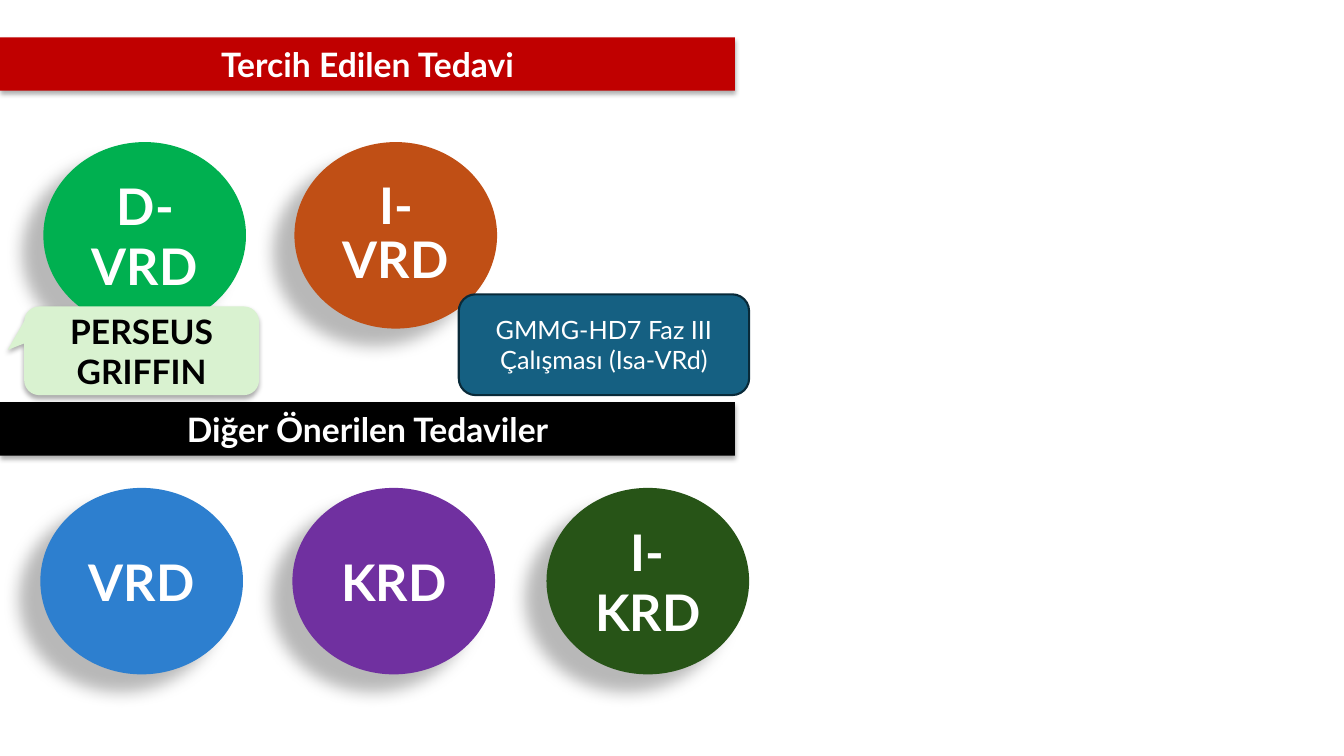
from dataclasses import dataclass

from lxml import etree
from pptx import Presentation
from pptx.dml.color import RGBColor
from pptx.enum.shapes import MSO_SHAPE
from pptx.enum.text import MSO_ANCHOR, PP_ALIGN
from pptx.oxml.ns import qn
from pptx.shapes.autoshape import Shape
from pptx.slide import Slide
from pptx.util import Inches, Pt

ELLIPSE = MSO_SHAPE.OVAL
RECTANGLE = MSO_SHAPE.RECTANGLE
ROUNDED = MSO_SHAPE.ROUNDED_RECTANGLE
CALLOUT = MSO_SHAPE.ROUNDED_RECTANGULAR_CALLOUT
MIDDLE = MSO_ANCHOR.MIDDLE
CENTER = PP_ALIGN.CENTER


@dataclass(frozen=True)
class Shadow:
    opacity: int
    blur: float
    distance: float
    angle: int


@dataclass(frozen=True)
class Theme:
    font: str = "Lato"
    white: str = "FFFFFF"
    black: str = "000000"
    red: str = "C00000"
    green: str = "00B050"
    orange: str = "C04F15"
    blue: str = "2D7FCF"
    purple: str = "7030A0"
    dark_green: str = "275417"
    pale_green: str = "D9F2D0"
    teal: str = "156082"
    dark_teal: str = "092A39"
    regimen_size: int = 36
    heading_size: int = 24
    study_size: int = 18
    deep_shadow: Shadow = Shadow(28, 11.8, 19.7, 141)
    soft_shadow: Shadow = Shadow(32, 3.5, 2.2, 90)


@dataclass(frozen=True)
class Regimen:
    name: str
    left: float
    top: float
    fill: str
    line_spacing: float = 1.0


@dataclass(frozen=True)
class Banner:
    title: str
    top: float
    fill: str


THEME = Theme()
PREFERRED_TOP, OTHER_TOP = 1.41, 4.84
REGIMENS = (
    Regimen("D-VRD", 0.43, PREFERRED_TOP, THEME.green),
    Regimen("I-KRD", 5.42, OTHER_TOP, THEME.dark_green),
    Regimen("KRD", 2.9, OTHER_TOP, THEME.purple),
    Regimen("VRD", 0.4, OTHER_TOP, THEME.blue),
    Regimen("I-VRD", 2.92, PREFERRED_TOP, THEME.orange, 0.9),
)
BANNERS = (
    Banner("Diğer Önerilen Tedaviler", 3.99, THEME.black),
    Banner("Tercih Edilen Tedavi", 0.37, THEME.red),
)


def add_shadow(shape: Shape, shadow: Shadow) -> None:
    effects = shape._element.spPr.find(qn("a:effectLst"))
    outer = etree.SubElement(
        effects,
        qn("a:outerShdw"),
        blurRad=str(Pt(shadow.blur)),
        dist=str(Pt(shadow.distance)),
        dir=str(shadow.angle * 60000),
        algn="ctr",
        rotWithShape="0",
    )
    color = etree.SubElement(outer, qn("a:srgbClr"), val=THEME.black)
    etree.SubElement(color, qn("a:alpha"), val=str(shadow.opacity * 1000))


def add_block(slide: Slide, kind: MSO_SHAPE, left: float, top: float,
              width: float, height: float, fill: str,
              shadow: Shadow | None = None) -> Shape:
    shape = slide.shapes.add_shape(
        kind, Inches(left), Inches(top), Inches(width), Inches(height))
    shape.fill.solid()
    shape.fill.fore_color.rgb = RGBColor.from_string(fill)
    shape.line.fill.background()
    shape.shadow.inherit = False
    if shadow:
        add_shadow(shape, shadow)
    return shape


def write_text(shape: Shape, text: str, *, size: int, color: str = THEME.white,
               bold: bool = True, line_spacing: float = 1.0) -> None:
    frame = shape.text_frame
    frame.word_wrap = True
    frame.vertical_anchor = MIDDLE
    frame.text = text
    for paragraph in frame.paragraphs:
        paragraph.alignment = CENTER
        paragraph.line_spacing = line_spacing
        for run in paragraph.runs:
            run.font.name = THEME.font
            run.font.size = Pt(size)
            run.font.bold = bold
            run.font.color.rgb = RGBColor.from_string(color)


def add_regimen(slide: Slide, regimen: Regimen) -> None:
    shape = add_block(slide, ELLIPSE, regimen.left, regimen.top, 2.01, 1.85,
                      regimen.fill, THEME.deep_shadow)
    write_text(shape, regimen.name, size=THEME.regimen_size,
               line_spacing=regimen.line_spacing)


def add_banner(slide: Slide, banner: Banner) -> None:
    shape = add_block(slide, RECTANGLE, 0, banner.top, 7.29, 0.53,
                      banner.fill, THEME.soft_shadow)
    write_text(shape, banner.title, size=THEME.heading_size)


def add_trials_callout(slide: Slide) -> None:
    shape = add_block(slide, CALLOUT, 0.24, 3.04, 2.33, 0.88,
                      THEME.pale_green, THEME.soft_shadow)
    for index, value in enumerate((-0.57, -0.01, 0.17)):
        shape.adjustments[index] = value
    write_text(shape, "PERSEUS\nGRIFFIN", size=THEME.heading_size,
               color=THEME.black)


def add_study_box(slide: Slide) -> None:
    shape = add_block(slide, ROUNDED, 4.55, 2.92, 2.88, 1, THEME.teal)
    shape.line.color.rgb = RGBColor.from_string(THEME.dark_teal)
    shape.line.width = Pt(1.5)
    write_text(shape, "GMMG‑HD7 Faz III Çalışması (Isa‑VRd)",
               size=THEME.study_size, bold=False)


def main() -> None:
    presentation = Presentation()
    presentation.slide_width = Inches(13.33)
    presentation.slide_height = Inches(7.5)
    slide = presentation.slides.add_slide(presentation.slide_layouts[6])
    *plain_regimens, front_regimen = REGIMENS
    for regimen in plain_regimens:
        add_regimen(slide, regimen)
    for banner in BANNERS:
        add_banner(slide, banner)
    add_regimen(slide, front_regimen)
    add_trials_callout(slide)
    add_study_box(slide)
    presentation.save("out.pptx")


if __name__ == "__main__":
    main()
